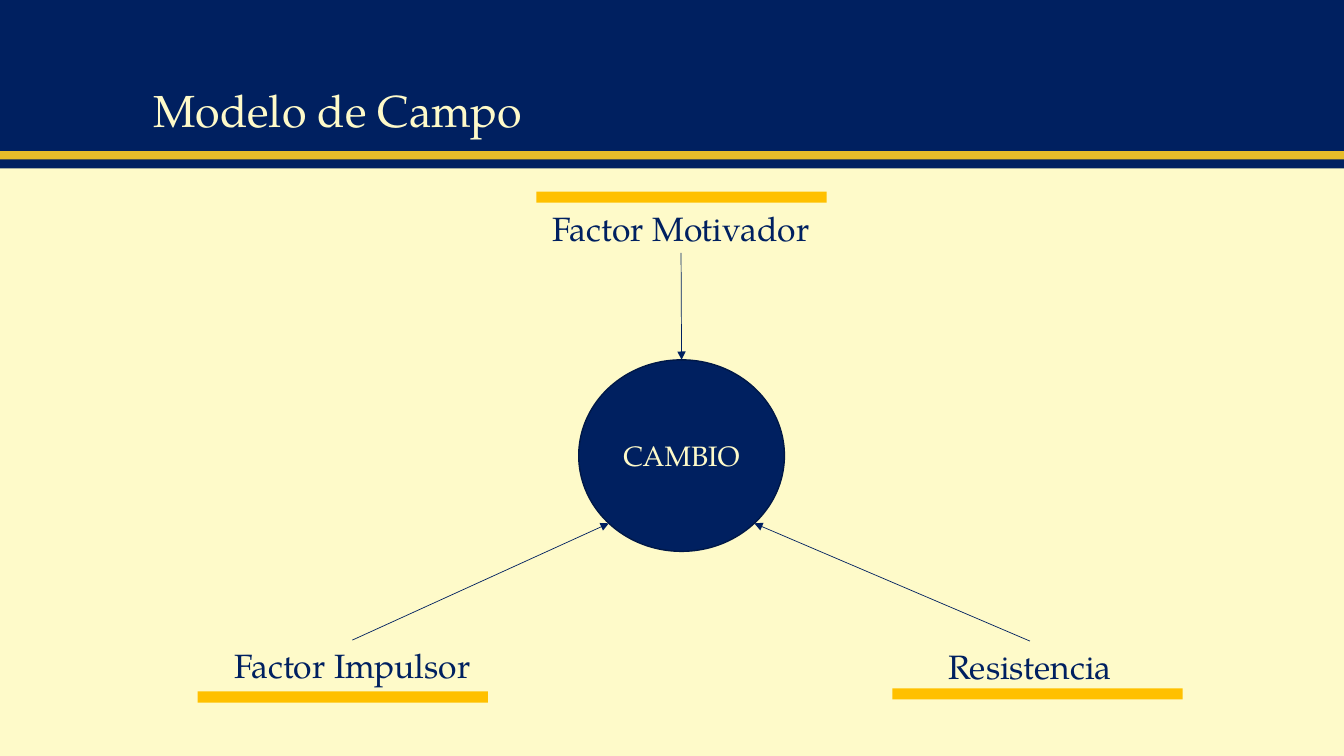
import math
from dataclasses import dataclass

import pptx
import pptx.dml.color
import pptx.enum.shapes
import pptx.enum.text
import pptx.oxml
import pptx.oxml.ns
import pptx.util
from pptx.util import Inches

SHAPE = pptx.enum.shapes.MSO_SHAPE
ALIGN = pptx.enum.text.PP_ALIGN
ANCHOR = pptx.enum.text.MSO_ANCHOR
TOP, BOTTOM = 0, 2


@dataclass(frozen=True)
class Theme:
    font: str = "TeX Gyre Pagella"
    cream: str = "FEFAC9"
    navy: str = "002060"
    outline: str = "001847"
    gold: str = "E7BC29"
    amber: str = "FFC000"
    title_size: int = 32
    label_size: int = 24
    center_size: int = 20


@dataclass(frozen=True)
class Band:
    top: float
    height: float
    color: str


@dataclass(frozen=True)
class Factor:
    """A labelled force; angle is where its arrow meets the circle, clockwise from the right."""
    text: str
    left: float
    top: float
    bar_left: float
    bar_top: float
    side: int
    angle: float


THEME = Theme()
SLIDE_WIDTH, SLIDE_HEIGHT = 13.33, 7.5
LABEL_WIDTH, LABEL_HEIGHT = 3.11, 0.5
BAR_WIDTH, BAR_HEIGHT = 2.88, 0.11
CIRCLE_LEFT, CIRCLE_TOP, CIRCLE_WIDTH, CIRCLE_HEIGHT = 5.74, 3.57, 2.04, 1.9

BANDS = [
    Band(0, 1.5, THEME.navy),
    Band(1.5, 0.09, THEME.gold),
    Band(1.58, 0.09, THEME.navy),
]
FACTORS = [
    Factor("Factor Motivador", 5.2, 2.01, 5.32, 1.9, BOTTOM, 270),
    Factor("Factor Impulsor", 1.94, 6.35, 1.96, 6.86, TOP, 135),
    Factor("Resistencia", 8.66, 6.36, 8.85, 6.83, TOP, 45),
]


def rgb(color: str) -> pptx.dml.color.RGBColor:
    return pptx.dml.color.RGBColor.from_string(color)


def add_filled(page, kind, left: float, top: float, width: float, height: float, color: str):
    shape = page.shapes.add_shape(kind, Inches(left), Inches(top), Inches(width), Inches(height))
    shape.shadow.inherit = False
    shape.fill.solid()
    shape.fill.fore_color.rgb = rgb(color)
    shape.line.fill.background()
    return shape


def write(box, text: str, size: int, color: str, align, anchor) -> None:
    frame = box.text_frame
    frame.word_wrap = True
    frame.vertical_anchor = anchor
    para = frame.paragraphs[0]
    para.alignment = align
    span = para.add_run()
    span.text = text
    span.font.name = THEME.font
    span.font.size = pptx.util.Pt(size)
    span.font.color.rgb = rgb(color)


def add_title(page, text: str) -> None:
    title = page.shapes.title
    title.left, title.top = Inches(1.42), Inches(0.28)
    title.width, title.height = Inches(10.5), Inches(1.13)
    write(title, text, THEME.title_size, THEME.cream, ALIGN.LEFT, ANCHOR.BOTTOM)
    title.text_frame.auto_size = pptx.enum.text.MSO_AUTO_SIZE.NONE
    title.text_frame.paragraphs[0].line_spacing = 0.9
    # The title belongs in front of the header bands.
    title.element.getparent().append(title.element)


def add_circle(page):
    circle = add_filled(page, SHAPE.OVAL, CIRCLE_LEFT, CIRCLE_TOP,
                        CIRCLE_WIDTH, CIRCLE_HEIGHT, THEME.navy)
    circle.line.color.rgb = rgb(THEME.outline)
    circle.line.width = pptx.util.Pt(1)
    write(circle, "CAMBIO", THEME.center_size, THEME.cream, ALIGN.CENTER, ANCHOR.MIDDLE)
    return circle


def add_arrow(page, label, factor: Factor, circle) -> None:
    """Run an arrow from the label to the rim of the circle."""
    angle = math.radians(factor.angle)
    end_x = CIRCLE_LEFT + CIRCLE_WIDTH / 2 * (1 + math.cos(angle))
    end_y = CIRCLE_TOP + CIRCLE_HEIGHT / 2 * (1 + math.sin(angle))
    arrow = page.shapes.add_connector(pptx.enum.shapes.MSO_CONNECTOR.STRAIGHT,
                                      label.left, label.top, Inches(end_x), Inches(end_y))
    arrow.begin_connect(label, factor.side)
    if factor.side == BOTTOM:
        arrow.end_connect(circle, TOP)
    arrow.line.color.rgb = rgb(THEME.navy)
    arrow.line.width = pptx.util.Pt(0.5)
    namespace = pptx.oxml.ns.nsdecls("a")
    line = arrow.line.fill.fore_color and arrow.element.spPr.find(pptx.oxml.ns.qn("a:ln"))
    line.append(pptx.oxml.parse_xml(f'<a:tailEnd {namespace} type="triangle"/>'))
    arrow.element.spPr.append(pptx.oxml.parse_xml(f"<a:effectLst {namespace}/>"))


def add_factor(page, factor: Factor, circle) -> None:
    label = page.shapes.add_textbox(Inches(factor.left), Inches(factor.top),
                                    Inches(LABEL_WIDTH), Inches(LABEL_HEIGHT))
    write(label, factor.text, THEME.label_size, THEME.navy, ALIGN.CENTER, ANCHOR.TOP)
    label.text_frame.auto_size = pptx.enum.text.MSO_AUTO_SIZE.SHAPE_TO_FIT_TEXT
    add_arrow(page, label, factor, circle)
    add_filled(page, SHAPE.RECTANGLE, factor.bar_left, factor.bar_top,
               BAR_WIDTH, BAR_HEIGHT, THEME.amber)


def main() -> None:
    deck = pptx.Presentation()
    deck.slide_width, deck.slide_height = Inches(SLIDE_WIDTH), Inches(SLIDE_HEIGHT)
    page = deck.slides.add_slide(deck.slide_layouts.get_by_name("Title Only"))
    page.background.fill.solid()
    page.background.fill.fore_color.rgb = rgb(THEME.cream)
    for band in BANDS:
        add_filled(page, SHAPE.RECTANGLE, 0, band.top, SLIDE_WIDTH, band.height, band.color)
    add_title(page, "Modelo de Campo")
    circle = add_circle(page)
    for factor in FACTORS:
        add_factor(page, factor, circle)
    deck.save("out.pptx")


if __name__ == "__main__":
    main()
